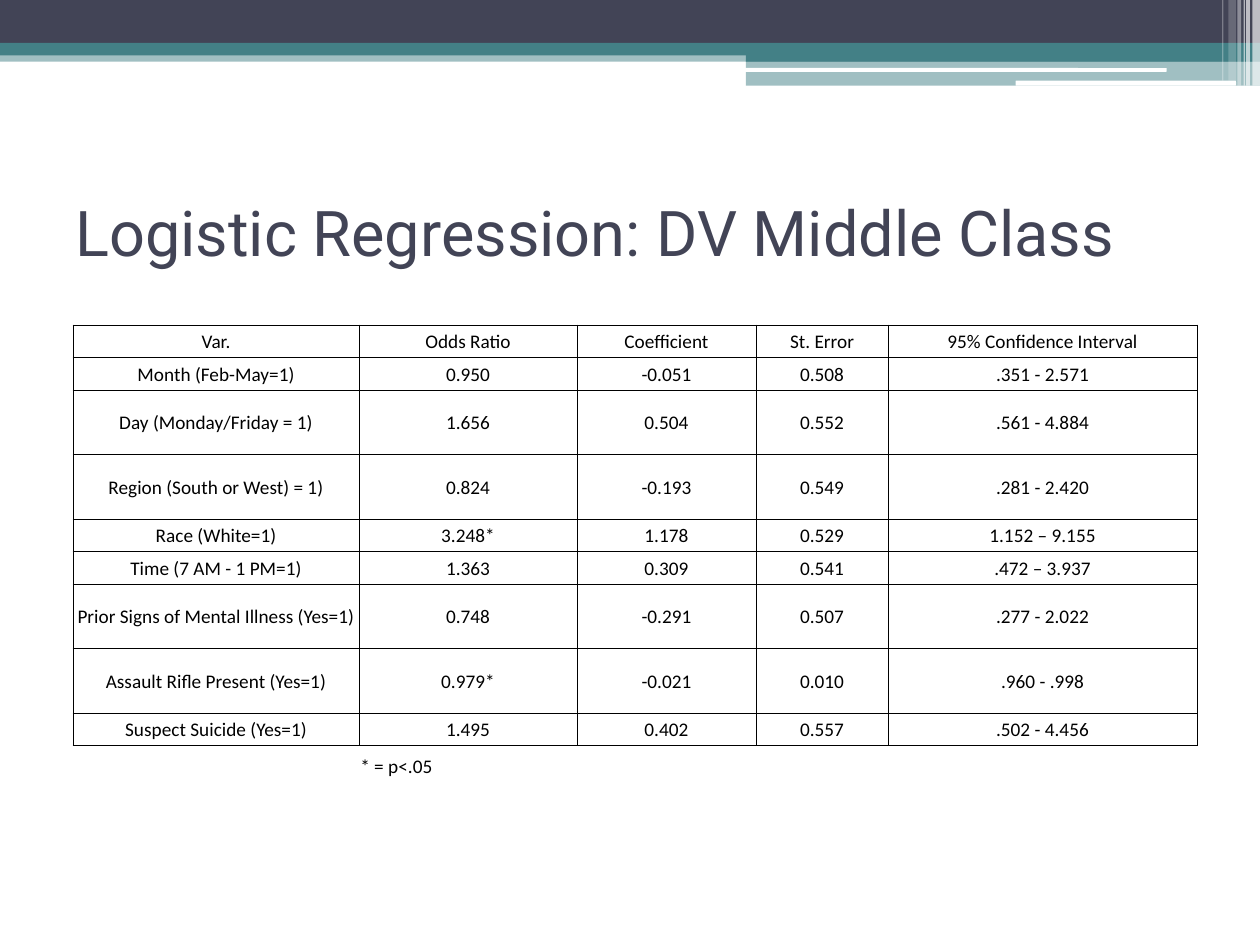
from lxml.etree import SubElement
from pptx import Presentation
from pptx.dml.color import RGBColor
from pptx.enum.shapes import MSO_SHAPE
from pptx.enum.text import MSO_ANCHOR, PP_ALIGN
from pptx.oxml.ns import qn
from pptx.util import Inches, Pt

COLORS = {"navy": "424456", "teal": "438086", "white": "FFFFFF", "black": "000000"}

# left, top, width, height, color, opacity in percent
BANDS = [
    (0, 0.4, 10, 0.09, "teal", 50),
    (0, 0, 10, 0.34, "navy", 100),
    (0, 0.34, 10, 0.1, "teal", 100),
    (5.92, 0.39, 4.08, 0.1, "teal", 100),
    (5.92, 0.48, 4.08, 0.2, "teal", 50),
]
ROUNDED_BARS = [(5.91, 0.54, 3.35, 0.03), (8.06, 0.64, 1.75, 0.04)]
# left, width, height, opacity in percent
STRIPES = [
    (9.94, 0.06, 0.68, 65),
    (9.89, 0.03, 0.68, 65),
    (9.87, 0.01, 0.68, 60),
    (9.82, 0.03, 0.68, 40),
    (9.75, 0.06, 0.64, 20),
    (9.7, 0.01, 0.64, 30),
]

REGRESSION = [
    ("Var.", "Odds Ratio", "Coefficient", "St. Error", "95% Confidence Interval"),
    ("Month (Feb-May=1)", "0.950", "-0.051", "0.508", ".351 - 2.571"),
    ("Day (Monday/Friday = 1)", "1.656", "0.504", "0.552", ".561 - 4.884"),
    ("Region (South or West) = 1)", "0.824", "-0.193", "0.549", ".281 - 2.420"),
    ("Race (White=1)", "3.248*", "1.178", "0.529", "1.152 – 9.155"),
    ("Time (7 AM - 1 PM=1)", "1.363", "0.309", "0.541", ".472 – 3.937"),
    ("Prior Signs of Mental Illness (Yes=1)", "0.748", "-0.291", "0.507", ".277 - 2.022"),
    ("Assault Rifle Present (Yes=1)", "0.979*", "-0.021", "0.010", ".960 - .998"),
    ("Suspect Suicide (Yes=1)", "1.495", "0.402", "0.557", ".502 - 4.456"),
]
FOOTNOTE_ROWS = [("", "* = p<.05", "", "", ""), ("",) * 5]
COLUMN_WIDTHS = [2.27, 1.73, 1.42, 1.05, 2.45]
ROW_HEIGHT, TALL_ROW_HEIGHT = 0.26, 0.51
TALL_ROWS = {2, 3, 6, 7}


class SlideBuilder:
    title_font, body_font = "Roboto", "Calibri"
    title_size, body_size = Pt(36), Pt(11)
    border_width = Pt(0.5)

    def __init__(self, slide):
        self.slide = slide

    def bar(self, left, top, width, height, color, opacity=100, rounded=False):
        kind = MSO_SHAPE.ROUNDED_RECTANGLE if rounded else MSO_SHAPE.RECTANGLE
        shape = self.slide.shapes.add_shape(
            kind, Inches(left), Inches(top), Inches(width), Inches(height))
        shape.shadow.inherit = False
        shape.line.fill.background()
        shape.fill.solid()
        shape.fill.fore_color.rgb = RGBColor.from_string(COLORS[color])
        if opacity < 100:
            color_element = shape.fill._xPr.find(".//" + qn("a:srgbClr"))
            SubElement(color_element, qn("a:alpha"), val=str(opacity * 1000))

    def title(self, text, left, top, width, height):
        box = self.slide.shapes.add_textbox(
            Inches(left), Inches(top), Inches(width), Inches(height))
        text_frame = box.text_frame
        text_frame.word_wrap = True
        text_frame.vertical_anchor = MSO_ANCHOR.MIDDLE
        text_frame.text = text
        self.format_run(text_frame.paragraphs[0].runs[0],
                        self.title_font, self.title_size, "navy")

    def format_run(self, run, name, size, color):
        run.font.name, run.font.size, run.font.bold = name, size, False
        run.font.color.rgb = RGBColor.from_string(COLORS[color])

    def table(self, left, top, widths, heights, rows, ruled_count):
        """Draw a table whose first ruled_count rows have borders."""
        frame = self.slide.shapes.add_table(
            len(rows), len(widths), Inches(left), Inches(top),
            Inches(sum(widths)), Inches(sum(heights)))
        table = frame.table
        table.first_row = table.horz_banding = False
        for column, width in zip(table.columns, widths):
            column.width = Inches(width)
        for row, height in zip(table.rows, heights):
            row.height = Inches(height)
        for row_index, texts in enumerate(rows):
            ruled = row_index < ruled_count
            if ruled:
                sides = "LRTB"
            else:
                sides = "T" if row_index == ruled_count else ""
            for column_index, text in enumerate(texts):
                cell = table.cell(row_index, column_index)
                self.cell_text(cell, text, ruled)
                self.cell_borders(cell, sides)
                cell.fill.background()

    def cell_text(self, cell, text, centered):
        cell.margin_left = cell.margin_right = cell.margin_top = Inches(0.01)
        cell.margin_bottom = 0
        cell.vertical_anchor = MSO_ANCHOR.MIDDLE if centered else MSO_ANCHOR.BOTTOM
        cell.text_frame.text = text
        paragraph = cell.text_frame.paragraphs[0]
        paragraph.alignment = PP_ALIGN.CENTER if centered else PP_ALIGN.LEFT
        for run in paragraph.runs:
            self.format_run(run, self.body_font, self.body_size, "black")
        if not text:  # keeps an empty row from growing to the default text size
            SubElement(paragraph._p, qn("a:endParaRPr"),
                       sz=str(int(self.body_size.pt * 100)))

    def cell_borders(self, cell, sides):
        properties = cell._tc.get_or_add_tcPr()
        for side in "LRTB":
            line = SubElement(properties, qn("a:ln" + side), w=str(self.border_width))
            if side in sides:
                fill = SubElement(line, qn("a:solidFill"))
                SubElement(fill, qn("a:srgbClr"), val=COLORS["black"])
            else:
                SubElement(line, qn("a:noFill"))


def main():
    presentation = Presentation()
    presentation.slide_width, presentation.slide_height = Inches(10), Inches(7.5)
    builder = SlideBuilder(presentation.slides.add_slide(presentation.slide_layouts[6]))

    for band in BANDS:
        builder.bar(*band)
    for rounded_bar in ROUNDED_BARS:
        builder.bar(*rounded_bar, "white", rounded=True)
    for left, width, height, opacity in STRIPES:
        builder.bar(left, 0, width, height, "white", opacity)

    builder.title("Logistic Regression: DV Middle Class", 0.5, 1.25, 9, 1.17)
    rows = REGRESSION + FOOTNOTE_ROWS
    heights = [TALL_ROW_HEIGHT if index in TALL_ROWS else ROW_HEIGHT
               for index in range(len(rows))]
    builder.table(0.58, 2.58, COLUMN_WIDTHS, heights, rows, len(REGRESSION))

    presentation.save("out.pptx")


if __name__ == "__main__":
    main()
